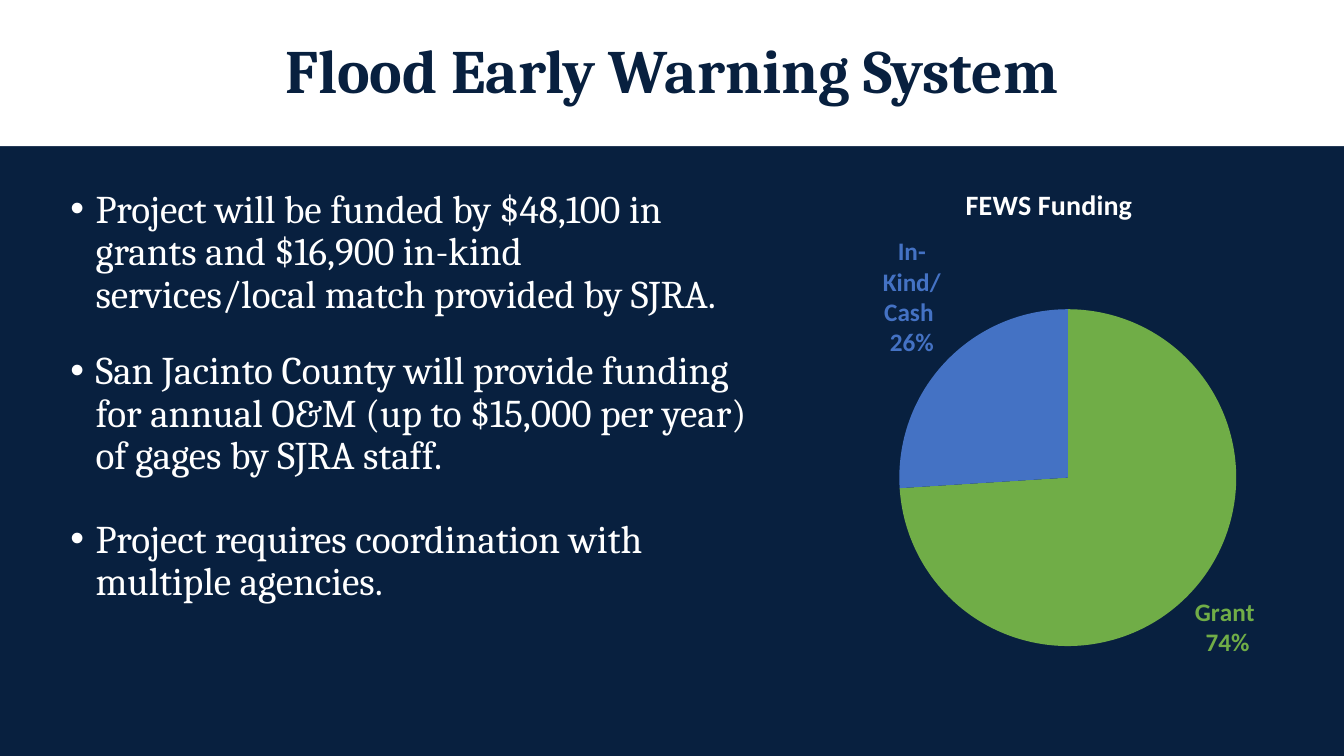
import pptx
import pptx.chart.data
import pptx.dml.color
import pptx.enum.chart
import pptx.enum.shapes
import pptx.enum.text
import pptx.oxml
import pptx.util
from pptx.util import Inches, Pt


def color(value):
    return pptx.dml.color.RGBColor.from_string(value)


class FundingSlide:
    """Style and drawing methods for the flood warning funding slide."""

    NAVY, WHITE, GREEN, BLUE = "08203F", "FFFFFF", "70AD47", "4472C4"
    TEXT_FONT, CHART_FONT = "Cambria", "Calibri"

    def __init__(self, presentation):
        self.slide = presentation.slides.add_slide(presentation.slide_layouts[6])
        fill = self.slide.background.fill
        fill.solid()
        fill.fore_color.rgb = color(self.NAVY)

    def style(self, font, name, size, fill, bold=False):
        font.name, font.size, font.bold = name, Pt(size), bold
        font.color.rgb = color(fill)

    def title_band(self, text, width, height):
        shape = self.slide.shapes.add_shape(
            pptx.enum.shapes.MSO_SHAPE.RECTANGLE, 0, 0, Inches(width), Inches(height))
        shape.shadow.inherit = False
        shape.fill.solid()
        shape.fill.fore_color.rgb = color(self.WHITE)
        shape.line.fill.background()
        shape.text_frame.vertical_anchor = pptx.enum.text.MSO_ANCHOR.MIDDLE
        paragraph = shape.text_frame.paragraphs[0]
        paragraph.text = text
        paragraph.alignment = pptx.enum.text.PP_ALIGN.CENTER
        paragraph.line_spacing = 0.9
        self.style(paragraph.font, self.TEXT_FONT, 44, self.NAVY, True)

    def bullets(self, items, left, top, width, height):
        shape = self.slide.shapes.add_textbox(
            Inches(left), Inches(top), Inches(width), Inches(height))
        frame = shape.text_frame
        frame.word_wrap = True
        frame.margin_top = Inches(0.26)
        for index, (text, space_before) in enumerate(items):
            paragraph = frame.add_paragraph() if index else frame.paragraphs[0]
            paragraph.text = text
            paragraph.line_spacing = 0.9
            paragraph.space_before = Pt(space_before)
            self.style(paragraph.font, self.TEXT_FONT, 28, self.WHITE)
            properties = paragraph._p.get_or_add_pPr()
            properties.set("marL", str(Inches(0.75)))
            properties.set("indent", str(Inches(-0.25)))
            for tag, key, value in (("buFont", "typeface", "Arial"), ("buChar", "char", "•")):
                bullet = pptx.oxml.xmlchemy.OxmlElement(f"a:{tag}")
                bullet.set(key, value)
                properties.insert_element_before(bullet, "a:tabLst", "a:defRPr", "a:extLst")

    def pie(self, title, shares, left, top, width, height, plot_area):
        data = pptx.chart.data.CategoryChartData()
        data.categories = [name for name, _, _ in shares]
        data.add_series("Series 1", [value for _, value, _ in shares])
        chart = self.slide.shapes.add_chart(
            pptx.enum.chart.XL_CHART_TYPE.PIE, Inches(left), Inches(top),
            Inches(width), Inches(height), data).chart
        chart.has_legend = False
        self.style(chart.font, self.CHART_FONT, 18, self.WHITE, True)
        chart.has_title = True
        paragraph = chart.chart_title.text_frame.paragraphs[0]
        paragraph.text = title
        self.style(paragraph.font, self.CHART_FONT, 20, self.WHITE, True)
        plot = chart.plots[0]
        plot.vary_by_categories = True
        for index, (_, _, fill) in enumerate(shares):
            point = plot.series[0].points[index]
            point.format.fill.solid()
            point.format.fill.fore_color.rgb = color(fill)
            label = point.data_label
            self.style(label.font, self.CHART_FONT, 18, fill, True)
            label.position = pptx.enum.chart.XL_LABEL_POSITION.OUTSIDE_END
            element = label._dLbl
            for tag, shown in (("showVal", "0"), ("showCatName", "1"), ("showPercent", "1")):
                element.find(pptx.oxml.ns.qn(f"c:{tag}")).set("val", shown)
            separator = pptx.oxml.xmlchemy.OxmlElement("c:separator")
            separator.text = "\n"
            element.append(separator)
        area = chart._chartSpace.chart.plotArea
        for layout in area.findall(pptx.oxml.ns.qn("c:layout")):
            area.remove(layout)
        layout = pptx.oxml.xmlchemy.OxmlElement("c:layout")
        manual = pptx.oxml.xmlchemy.OxmlElement("c:manualLayout")
        settings = [("layoutTarget", "inner"), ("xMode", "edge"), ("yMode", "edge")]
        for tag, value in settings + list(zip("xywh", plot_area)):
            setting = pptx.oxml.xmlchemy.OxmlElement(f"c:{tag}")
            setting.set("val", str(value))
            manual.append(setting)
        layout.append(manual)
        area.insert(0, layout)


def main():
    presentation = pptx.Presentation()
    presentation.slide_width, presentation.slide_height = Inches(13.33), Inches(7.5)
    page = FundingSlide(presentation)
    page.title_band("Flood Early Warning System", 13.33, 1.45)
    page.bullets([
        ("Project will be funded by $48,100 in grants and $16,900 in-kind "
         "services/local match provided by SJRA.", 0),
        ("San Jacinto County will provide funding for annual O&M "
         "(up to $15,000 per year) of gages by SJRA staff.", 24.5),
        ("Project requires coordination with multiple agencies.", 29.5),
    ], 0.1, 1.62, 7.4, 5.88)
    page.pie("FEWS Funding", [
        ("Grant ", 74, page.GREEN), ("In-Kind/Cash ", 26, page.BLUE),
    ], 7.75, 1.62, 5.31, 5.57, (0.22, 0.26, 0.63, 0.6))
    presentation.save("out.pptx")


if __name__ == "__main__":
    main()
